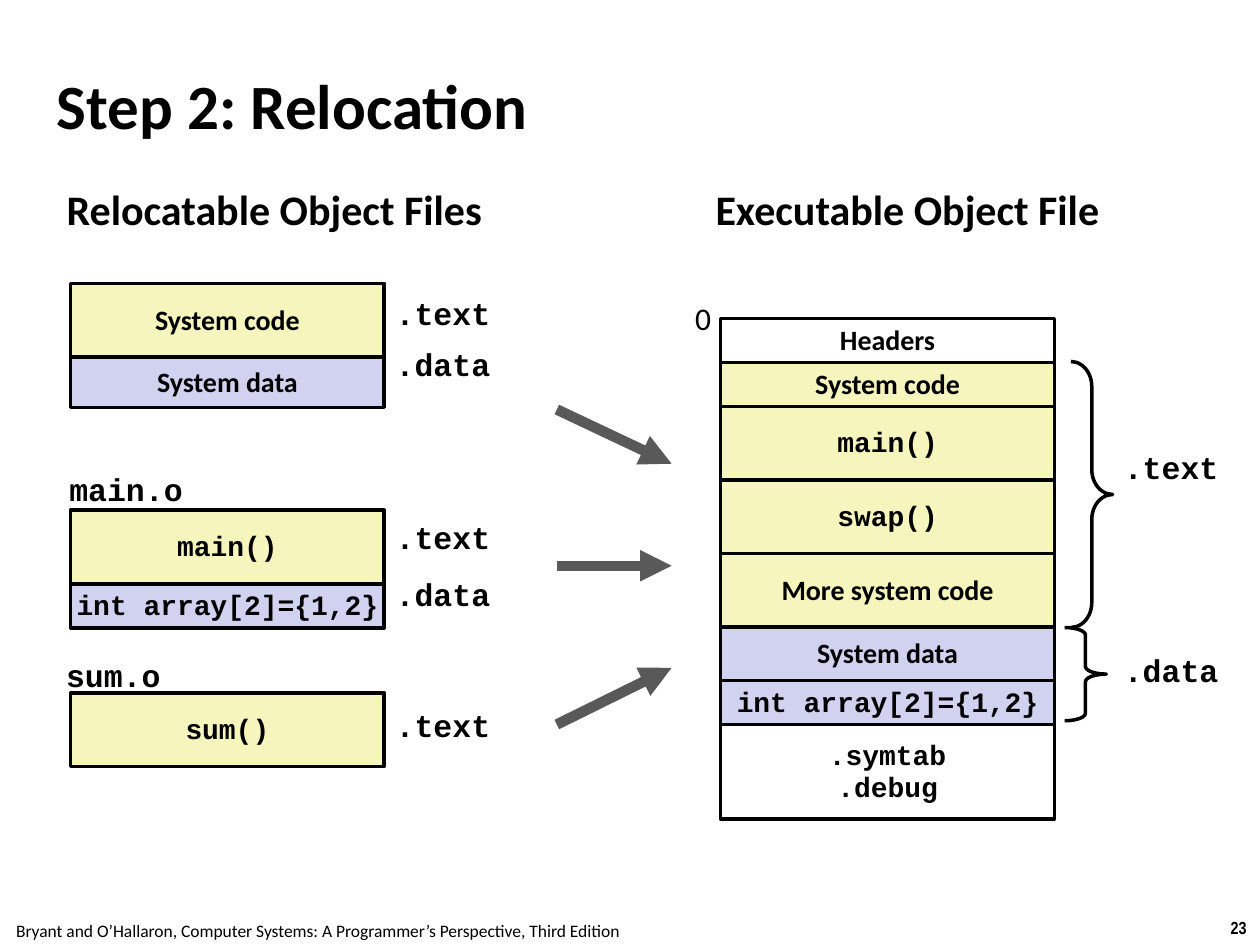
from lxml import etree
from pptx import Presentation
from pptx.dml.color import RGBColor
from pptx.enum.shapes import MSO_CONNECTOR, MSO_SHAPE
from pptx.enum.text import MSO_ANCHOR, PP_ALIGN
from pptx.oxml.ns import qn
from pptx.util import Pt

RECTANGLE = MSO_SHAPE.RECTANGLE
BRACE = MSO_SHAPE.RIGHT_BRACE
STRAIGHT = MSO_CONNECTOR.STRAIGHT
LEFT, CENTER = PP_ALIGN.LEFT, PP_ALIGN.CENTER
TOP, MIDDLE = MSO_ANCHOR.TOP, MSO_ANCHOR.MIDDLE

SANS, MONO, NARROW = "Calibri", "Courier New", "Arial Narrow"
BLACK, WHITE, GRAY = "000000", "FFFFFF", "595959"
CODE, DATA = "F6F5BD", "D1D1F0"
SPACING = {SANS: 0.98, MONO: 0.94, NARROW: 1.0}


def color(value):
    return RGBColor.from_string(value)


def write(shape, text, font=SANS, size=16, bold=True, align=CENTER,
          anchor=MIDDLE, spacing=None, margins=(7.2, 3.6)):
    frame = shape.text_frame
    frame.word_wrap = False
    frame.vertical_anchor = anchor
    frame.margin_left = frame.margin_right = Pt(margins[0])
    frame.margin_top = frame.margin_bottom = Pt(margins[1])
    for index, line in enumerate(text.split("\n")):
        para = frame.paragraphs[0] if index == 0 else frame.add_paragraph()
        para.alignment = align
        para.line_spacing = spacing or SPACING[font]
        span = para.add_run()
        span.text = line
        span.font.name = font
        span.font.size = Pt(size)
        span.font.bold = bold
        span.font.color.rgb = color(BLACK)


def add_label(page, text, left, top, width, height, **style):
    box = page.shapes.add_textbox(Pt(left), Pt(top), Pt(width), Pt(height))
    write(box, text, **{"anchor": TOP, **style})


def add_mono_label(page, text, left, top, width=68.4):
    add_label(page, text, left, top, width, 28, font=MONO, size=18)


def add_outline(page, kind, left, top, width, height):
    shape = page.shapes.add_shape(kind, Pt(left), Pt(top), Pt(width), Pt(height))
    shape.shadow.inherit = False
    shape.line.color.rgb = color(BLACK)
    shape.line.width = Pt(2)
    return shape


def add_stack(page, left, top, width, rows):
    for text, height, fill, font in rows:
        box = add_outline(page, RECTANGLE, left, top, width, height)
        box.fill.solid()
        box.fill.fore_color.rgb = color(fill)
        write(box, text, font=font)
        top += height


def add_brace(page, left, top, height, curve):
    brace = add_outline(page, BRACE, left, top, 23.8, height)
    brace.fill.background()
    brace.adjustments[0] = curve
    brace.adjustments[1] = 0.5


def add_arrow(page, start, end):
    arrow = page.shapes.add_connector(
        STRAIGHT, Pt(318.2), Pt(start), Pt(383.8), Pt(end))
    arrow.line.color.rgb = color(GRAY)
    arrow.line.width = Pt(6)
    line = arrow.line._get_or_add_ln()
    etree.SubElement(line, qn("a:tailEnd"), type="triangle")
    etree.SubElement(arrow._element.spPr, qn("a:effectLst"))


def add_object_files(page):
    add_label(page, "Relocatable Object Files", 31, 103, 254, 36,
              size=24, align=LEFT)
    files = [
        (162, [("System code", 42, CODE, SANS), ("System data", 28.8, DATA, SANS)]),
        (291.6, [("main()", 42, CODE, MONO), ("int array[2]={1,2}", 25.2, DATA, MONO)]),
        (396, [("sum()", 42, CODE, MONO)]),
    ]
    for top, rows in files:
        add_stack(page, 40.3, top, 179.3, rows)
    add_mono_label(page, "main.o", 32.4, 267, 79.2)
    add_mono_label(page, "sum.o", 30.2, 373, 69.1)
    sections = [(".text", 166.3), (".data", 195.1), (".text", 294.5),
                (".data", 326.9), (".text", 401.8)]
    for text, top in sections:
        add_mono_label(page, text, 218.9, top)


def add_executable(page):
    add_label(page, "Executable Object File", 401.8, 103, 236, 36,
              size=24, align=LEFT)
    add_label(page, "0", 389.5, 168.5, 24.5, 28.8, size=18, bold=False)
    add_stack(page, 411.8, 182, 190.8, [
        ("Headers", 25.2, WHITE, SANS),
        ("System code", 25.2, CODE, SANS),
        ("main()", 42, CODE, MONO),
        ("swap()", 42, CODE, MONO),
        ("More system code", 42, CODE, SANS),
        ("System data", 30.6, DATA, SANS),
        ("int array[2]={1,2}", 25, DATA, MONO),
        (".symtab\n.debug", 54, WHITE, MONO),
    ])
    add_brace(page, 612, 206.6, 152, 0.6)
    add_brace(page, 608.4, 358.6, 53.3, 0.18)
    add_mono_label(page, ".text", 635, 254.2)
    add_mono_label(page, ".data", 635, 370)


def main():
    deck = Presentation()
    deck.slide_width, deck.slide_height = Pt(720), Pt(540)
    page = deck.slides.add_slide(deck.slide_layouts[6])
    add_label(page, "Step 2: Relocation", 29.5, 36.7, 598.3, 45.4, size=36,
              align=LEFT, anchor=MIDDLE, spacing=1.0, margins=(2.9, 2.9))
    add_object_files(page)
    add_executable(page)
    for start, end in [(234, 265), (323.3, 323.3), (414, 381.6)]:
        add_arrow(page, start, end)
    add_label(page, "Bryant and O’Hallaron, Computer Systems: "
              "A Programmer’s Perspective, Third Edition",
              -1.4, 522, 365.8, 19.4, size=10, bold=False, spacing=1.0)
    add_label(page, "23", 695.5, 520.6, 24.5, 19.4, font=NARROW, size=10)
    deck.save("out.pptx")


if __name__ == "__main__":
    main()
